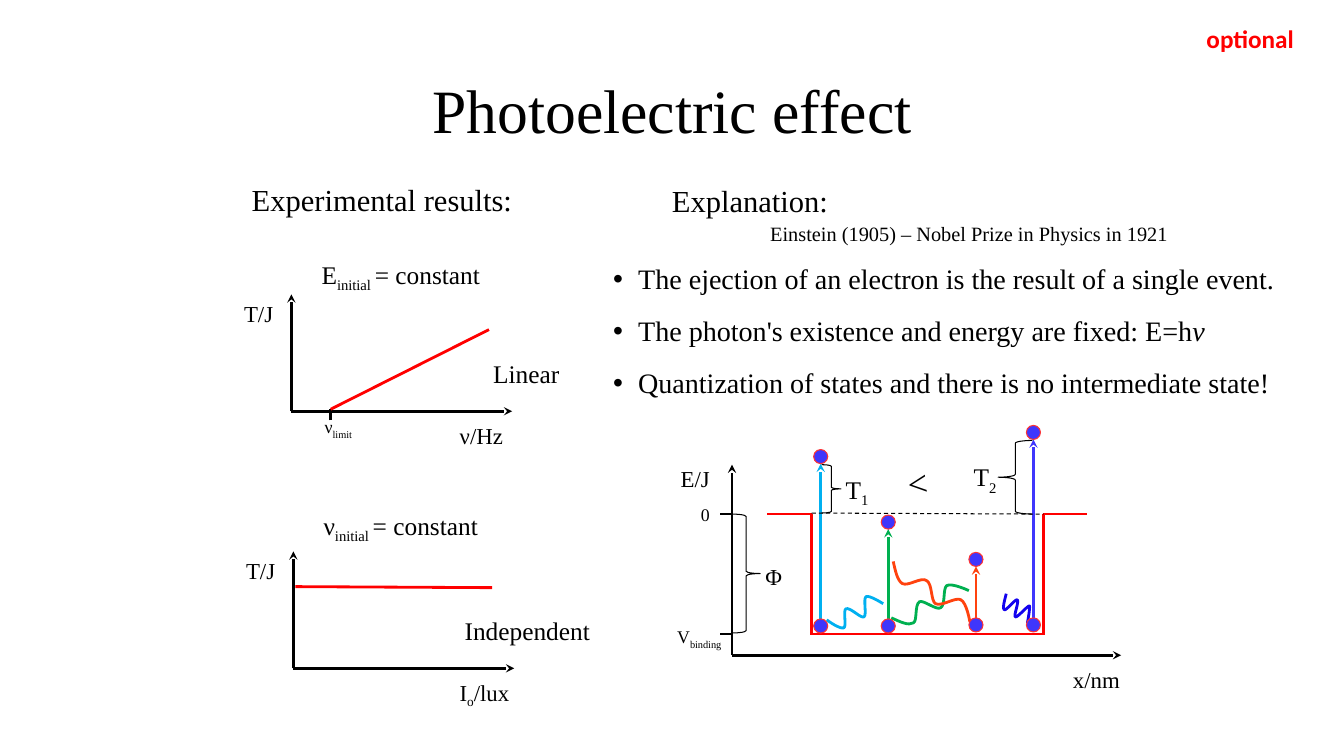
import pptx
import pptx.dml.color
import pptx.enum.dml
import pptx.enum.shapes
import pptx.enum.text
import pptx.oxml
import pptx.oxml.ns
import pptx.util

FACE = "Times New Roman"
BLACK, RED, BLUE = "000000", "FF0000", "3F36FC"
SKY, GREEN, FLAME, NAVY = "00B0F0", "00B050", "FF420E", "1302EE"

TITLE = ("Photoelectric effect", (92, 40, 1150, 145))
POINTS = [
    "The ejection of an electron is the result of a single event.",
    "The photon's existence and energy are fixed: E=h*v",
    "Quantization of states and there is no intermediate state!",
]
BODY = (598, 258, 693, 165)

LABELS = [
    ("Experimental results:", (239, 175, 280, 47), 21.8),
    ("Explanation:", (656, 176, 176, 47), 21.8),
    ("Einstein (1905) – Nobel Prize in Physics in 1921", (752, 215, 418, 35), 14.5),
    ("E_initial _= constant", (304, 252, 187, 41), 18.1),
    ("T/J", (232, 292, 49, 38), 16.3),
    ("Linear", (479, 350, 86, 41), 18.1),
    ("ν_limit", (310, 408, 51, 31), 12.7),
    ("ν/Hz", (446, 413, 63, 38), 16.3),
    ("ν_initial _= constant", (306, 501, 183, 41), 18.1),
    ("T/J", (234, 547, 49, 38), 16.3),
    ("Independent", (450, 605, 146, 41), 18.1),
    ("I_o_/lux", (445, 668, 71, 38), 16.3),
    ("E/J", (665, 456, 49, 38), 16.3),
    ("x/nm", (1054, 655, 67, 38), 16.3),
    ("0", (685, 495, 29, 31), 12.7),
    ("V_binding", (659, 616, 69, 31), 12.7),
    ("Φ", (749, 553, 37, 38), 16.3),
    ("T_1", (828, 465, 44, 41), 18.1),
    ("T_2", (955, 453, 44, 41), 18.1),
]
LESS = ("<", (890, 452, 40, 53), 25.4)
NOTE = ("optional", (1186, 18, 108, 40), 18)

AXES = [(289, 408, 219, 116), (291, 663, 219, 116), (726, 650, 386, 189)]
TICKS = [(328, 417, 328, 406), (725, 510, 714, 510), (725, 629, 714, 629)]
TRENDS = [(328, 406, 485, 327), (293, 582, 488, 583)]
WELL = [
    (804, 629, 1036, 629), (1034, 510, 1078, 510), (761, 510, 805, 510),
    (805, 510, 805, 630), (1035, 510, 1035, 630),
]
LEVEL = (805, 509, 1035, 510)
WAVES = [
    (GREEN, [(884, 613), (893, 617), (901, 621), (906, 618), (910, 616), (907, 600),
             (912, 597), (916, 595), (929, 606), (933, 603), (938, 600), (935, 584),
             (939, 581), (944, 578), (961, 586), (961, 586)]),
    (FLAME, [(886, 557), (888, 566), (890, 576), (895, 579), (901, 582), (914, 572),
             (919, 576), (925, 579), (923, 596), (928, 599), (934, 602), (948, 592),
             (953, 595), (959, 598), (962, 617), (962, 617)]),
    (NAVY, [(998, 589), (996, 597), (994, 604), (996, 605), (998, 606), (1007, 594),
            (1009, 595), (1011, 597), (1005, 611), (1007, 612), (1009, 613), (1019, 601),
            (1021, 601), (1022, 602), (1019, 618), (1019, 618)]),
    (SKY, [(820, 615), (827, 620), (834, 624), (837, 623), (840, 621), (836, 606),
           (839, 604), (843, 602), (854, 614), (857, 612), (860, 610), (856, 594),
           (859, 592), (862, 590), (876, 599), (876, 599)]),
]
JUMPS = [
    (814, 621, 453, SKY), (881, 621, 518, GREEN),
    (968, 620, 555, FLAME), (1025, 620, 429, BLUE),
]
RADIUS = 7
BRACES = [
    ("RIGHT_BRACE", (726, 510, 28, 118)),
    ("RIGHT_BRACE", (815, 461, 19, 48)),
    ("LEFT_BRACE", (990, 437, 34, 73)),
]


def px(n):
    return pptx.util.Emu(n * 9144)


def tint(code):
    return pptx.dml.color.RGBColor.from_string(code)


def style(item, vals):
    for name, val in vals.items():
        setattr(item, name, val)


def write(para, text, size, mark="_", face=FACE, color=BLACK, bold=False):
    for i, part in enumerate(text.split(mark)):
        run = para.add_run()
        run.text = part
        style(run.font, {"name": face, "size": pptx.util.Pt(size), "bold": bold})
        run.font.color.rgb = tint(color)
        if i % 2 and mark == "_":
            run.font._element.set("baseline", "-25000")
        elif i % 2:
            run.font.italic = True


def place(item, box):
    style(item, dict(zip(("left", "top", "width", "height"), map(px, box))))


def label(text, box, size, **look):
    item = slide.shapes.add_textbox(*map(px, box))
    item.text_frame.word_wrap = False
    para = item.text_frame.paragraphs[0]
    para.alignment = pptx.enum.text.PP_ALIGN.CENTER
    write(para, text, size, **look)
    return item


def stroke(item, color, width):
    item.line.color.rgb = tint(color)
    item.line.width = pptx.util.Pt(width)


def add(parent, tag, **vals):
    node = pptx.oxml.parse_xml(f"<{tag} {pptx.oxml.ns.nsdecls('a')}/>")
    for name, val in vals.items():
        node.set(name, val)
    parent.append(node)
    return node


def line(ends, color, width=2, head=False, dash=False):
    kind = pptx.enum.shapes.MSO_CONNECTOR.STRAIGHT
    item = slide.shapes.add_connector(kind, *map(px, ends))
    stroke(item, color, width)
    if dash:
        item.line.dash_style = pptx.enum.dml.MSO_LINE.DASH
    if head:
        add(item.line._get_or_add_ln(), "a:tailEnd", type="stealth")
    add(item._element.spPr, "a:effectLst")


def shape(kind, box, color, fill=None):
    item = slide.shapes.add_shape(pptx.enum.shapes.MSO_SHAPE[kind], *map(px, box))
    item.shadow.inherit = False
    stroke(item, color, 0.75)
    if fill:
        item.fill.solid()
        item.fill.fore_color.rgb = tint(fill)
    else:
        item.fill.background()


def wave(color, dots):
    pen = slide.shapes.build_freeform(*dots[0], scale=px(1))
    pen.add_line_segments(dots[1:], close=False)
    item = pen.convert_to_shape()
    item.shadow.inherit = False
    item.fill.background()
    stroke(item, color, 2)
    track = next(item._element.iter(pptx.oxml.ns.qn("a:path")))
    legs = track.findall(pptx.oxml.ns.qn("a:lnTo"))
    for i in range(0, len(legs), 3):
        curve = add(track, "a:cubicBezTo")
        for leg in legs[i:i + 3]:
            curve.append(leg[0])
            track.remove(leg)


def ball(x, y):
    shape("OVAL", (x - RADIUS, y - RADIUS, 2 * RADIUS, 2 * RADIUS), "FF3333", BLUE)


def heads():
    title, body = slide.placeholders
    for item, box in ((title, TITLE[1]), (body, BODY)):
        place(item, box)
        item.text_frame.auto_size = pptx.enum.text.MSO_AUTO_SIZE.NONE
    title.text_frame.vertical_anchor = pptx.enum.text.MSO_ANCHOR.MIDDLE
    para = title.text_frame.paragraphs[0]
    style(para, {"alignment": pptx.enum.text.PP_ALIGN.CENTER, "line_spacing": 0.9})
    write(para, TITLE[0], 44)
    frame = body.text_frame
    for i, text in enumerate(POINTS):
        para = frame.add_paragraph() if i else frame.paragraphs[0]
        style(para, {"line_spacing": 0.9, "space_before": pptx.util.Pt(10),
                     "space_after": pptx.util.Pt(5.4)})
        props = para._p.get_or_add_pPr()
        props.set("marL", str(px(25)))
        props.set("indent", str(px(-25)))
        add(props, "a:buFont", typeface="Arial")
        add(props, "a:buChar", char="•")
        write(para, text, 20.1, mark="*")


def main():
    """Build the photoelectric effect slide."""
    heads()
    for x, y, wide, high in AXES:
        line((x, y, x, y - high), BLACK, head=True)
        line((x, y, x + wide, y), BLACK, head=True)
    for ends in TICKS:
        line(ends, BLACK)
    for ends in TRENDS + WELL:
        line(ends, RED)
    for color, dots in WAVES:
        wave(color, dots)
    for x, low, high, color in JUMPS:
        line((x, low - RADIUS, x, high + RADIUS), color, head=True)
        ball(x, low)
        ball(x, high)
    line(LEVEL, BLACK, 0.75, dash=True)
    for kind, box in BRACES:
        shape(kind, box, BLACK)
    for item in LABELS:
        label(*item)
    label(*LESS).rotation = 353.4
    label(*NOTE, face="Calibri", color=RED, bold=True)
    deck.save("out.pptx")


if __name__ == "__main__":
    deck = pptx.Presentation()
    style(deck, {"slide_width": px(1333), "slide_height": px(750)})
    slide = deck.slides.add_slide(deck.slide_layouts[1])
    main()
